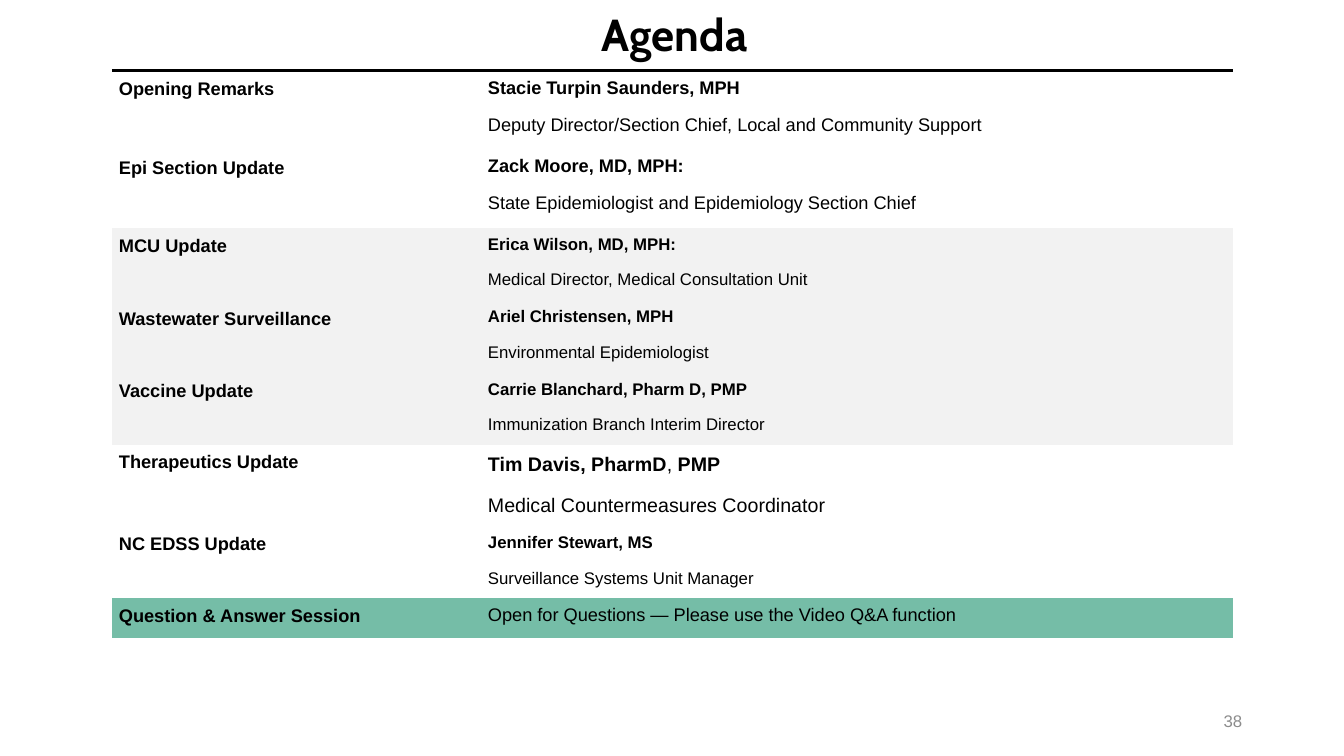
from dataclasses import dataclass

from lxml.etree import SubElement
from pptx import Presentation
from pptx.dml.color import RGBColor
from pptx.enum.text import MSO_ANCHOR, PP_ALIGN
from pptx.oxml.ns import qn
from pptx.util import Emu, Pt

NO_STYLE_NO_GRID = "{2D5ABB26-0587-4C30-8999-92F81FD0307C}"


@dataclass(frozen=True)
class Theme:
    heading_font: str = "Cabin"
    body_font: str = "Arial"
    text: str = "000000"
    muted: str = "8C8C8C"
    band: str = "F2F2F2"
    accent: str = "75BDA7"
    title_size: int = 32
    large_size: int = 14
    body_size: int = 13
    small_size: int = 12
    rule_width: float = 2.25


@dataclass(frozen=True)
class AgendaRow:
    topic: str
    details: tuple  # one tuple of (text, bold) runs per paragraph
    height: int
    size: int
    fill: str = None
    topic_spacing: float = 1.07
    detail_spacing: float = 1.0


def px(length):
    """One px is a hundredth of an inch."""
    return Emu(length * 9144)


def write_text(text_frame, paragraphs, *, font, size, color, align=PP_ALIGN.LEFT,
               line_spacing=1.0, gap=0):
    for index, runs in enumerate(paragraphs):
        paragraph = text_frame.paragraphs[0] if index == 0 else text_frame.add_paragraph()
        paragraph.alignment = align
        paragraph.line_spacing = line_spacing
        paragraph.space_before = Pt(gap if index else 0)
        paragraph.space_after = Pt(gap)
        for text, bold in runs:
            run = paragraph.add_run()
            run.text = text
            run.font.name = font
            run.font.size = Pt(size)
            run.font.bold = bold
            run.font.color.rgb = RGBColor.from_string(color)


class SlideBuilder:
    def __init__(self, presentation, theme):
        self.theme = theme
        self.slide = presentation.slides.add_slide(presentation.slide_layouts[5])

    def title(self, text, left, top, width, height):
        shape = self.slide.shapes.title
        shape.left, shape.top, shape.width, shape.height = map(px, (left, top, width, height))
        shape.text_frame.word_wrap = False
        shape.text_frame.vertical_anchor = MSO_ANCHOR.TOP
        write_text(shape.text_frame, [[(text, True)]], font=self.theme.heading_font,
                   size=self.theme.title_size, color=self.theme.text)

    def slide_number(self, text, left, top, width, height):
        shape = self.slide.shapes.add_textbox(*map(px, (left, top, width, height)))
        shape.text_frame.word_wrap = True
        shape.text_frame.vertical_anchor = MSO_ANCHOR.MIDDLE
        write_text(shape.text_frame, [[(text, False)]], font=self.theme.body_font,
                   size=self.theme.small_size, color=self.theme.muted, align=PP_ALIGN.RIGHT)

    def agenda(self, rows, left, top, column_widths):
        shape = self.slide.shapes.add_table(
            len(rows), len(column_widths), px(left), px(top),
            px(sum(column_widths)), px(sum(row.height for row in rows)))
        table = shape.table
        table.first_row = table.horz_banding = False
        table._tbl.tblPr.find(qn("a:tableStyleId")).text = NO_STYLE_NO_GRID
        for column, width in zip(table.columns, column_widths):
            column.width = px(width)
        for index, row in enumerate(rows):
            table.rows[index].height = px(row.height)
            topic, detail = table.rows[index].cells
            self.cell(topic, [[(row.topic, True)]], self.theme.body_size,
                      row.topic_spacing, row.fill)
            self.cell(detail, row.details, row.size, row.detail_spacing, row.fill)
        for cell in table.rows[0].cells:
            self.top_rule(cell)

    def cell(self, cell, paragraphs, size, line_spacing, fill):
        cell.margin_left = cell.margin_right = cell.margin_top = cell.margin_bottom = px(7)
        if fill:
            cell.fill.solid()
            cell.fill.fore_color.rgb = RGBColor.from_string(fill)
        else:
            cell.fill.background()
        write_text(cell.text_frame, paragraphs, font=self.theme.body_font, size=size,
                   color=self.theme.text, line_spacing=line_spacing, gap=6)

    def top_rule(self, cell):
        properties = cell._tc.get_or_add_tcPr()
        line = SubElement(properties, qn("a:lnT"), w=str(Pt(self.theme.rule_width)))
        properties.insert(0, line)  # borders come before the fill
        solid = SubElement(line, qn("a:solidFill"))
        SubElement(solid, qn("a:srgbClr"), val=self.theme.text)


def person(name, role):
    return ((name, True),), ((role, False),)


def main():
    theme = Theme()
    presentation = Presentation()
    presentation.slide_width, presentation.slide_height = px(1333), px(750)
    builder = SlideBuilder(presentation, theme)

    # Heading and page number
    builder.title("Agenda", 587, 2, 172, 64)
    builder.slide_number("38", 942, 695, 300, 40)

    # Agenda table
    rows = [
        AgendaRow("Opening Remarks",
                  person("Stacie Turpin Saunders, MPH",
                         "Deputy Director/Section Chief, Local and Community Support"),
                  78, theme.body_size),
        AgendaRow("Epi Section Update",
                  person("Zack Moore, MD, MPH:",
                         "State Epidemiologist and Epidemiology Section Chief"),
                  78, theme.body_size),
        AgendaRow("MCU Update",
                  person("Erica Wilson, MD, MPH:", "Medical Director, Medical Consultation Unit"),
                  72, theme.small_size, theme.band),
        AgendaRow("Wastewater Surveillance",
                  person("Ariel Christensen, MPH", "Environmental Epidemiologist"),
                  72, theme.small_size, theme.band),
        AgendaRow("Vaccine Update",
                  person("Carrie Blanchard, Pharm D, PMP", "Immunization Branch Interim Director"),
                  72, theme.small_size, theme.band),
        AgendaRow("Therapeutics Update",
                  ((("Tim Davis, PharmD", True), (", ", False), ("PMP", True)),
                   (("Medical Countermeasures Coordinator", False),)),
                  80, theme.large_size, topic_spacing=1.0, detail_spacing=1.07),
        AgendaRow("NC EDSS Update",
                  person("Jennifer Stewart, MS", "Surveillance Systems Unit Manager"),
                  68, theme.small_size, topic_spacing=1.0),
        AgendaRow("Question & Answer Session",
                  ((("Open for Questions — Please use the Video Q&A function", False),),),
                  40, theme.body_size, theme.accent),
    ]
    builder.agenda(rows, 111, 70, (366, 746))

    presentation.save("out.pptx")


if __name__ == "__main__":
    main()
